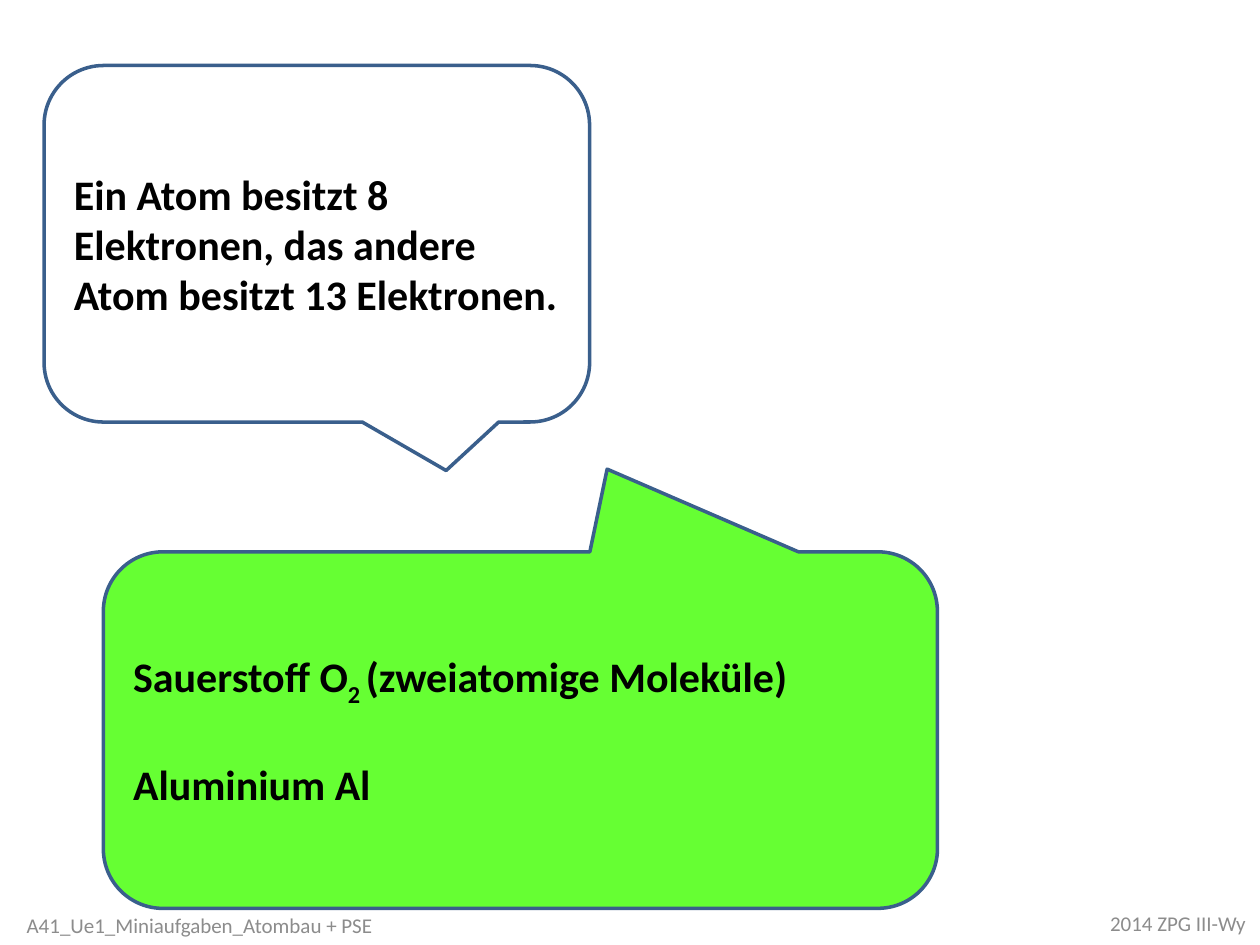
from dataclasses import dataclass

from pptx import Presentation
from pptx.dml.color import RGBColor
from pptx.enum.shapes import MSO_SHAPE
from pptx.enum.text import MSO_ANCHOR, PP_ALIGN
from pptx.util import Inches, Pt


@dataclass(frozen=True)
class Theme:
    font: str = "Calibri"
    ink: str = "000000"
    muted: str = "8C8C8C"
    outline: str = "3A5F8C"
    question_fill: str = "FFFFFF"
    answer_fill: str = "66FF33"
    body_size: int = 24
    footer_size: int = 12
    outline_width: int = 2
    answer_gap: int = 29
    subscript: str = "-25000"


THEME = Theme()

CALLOUTS = [
    {
        "box": (0.35, 0.52, 4.33, 2.83),
        "pointer": (0.237, 0.636, 0.167),
        "fill": THEME.question_fill,
        "lines": [
            [("Ein Atom besitzt 8 Elektronen, das andere Atom besitzt 13 Elektronen.", False)],
        ],
    },
    {
        "box": (0.82, 4.38, 6.62, 2.83),
        "pointer": (0.104, -0.732, 0.167),
        "fill": THEME.answer_fill,
        "lines": [
            [("Sauerstoff O", False), ("2 ", True), ("(zweiatomige Moleküle)", False)],
            [("Aluminium Al", False)],
        ],
    },
]

FOOTERS = [
    ("2014 ZPG III-Wy", (8.7, 7.13, 1.3, 0.4)),
    ("A41_Ue1_Miniaufgaben_Atombau + PSE", (0, 7.14, 3.17, 0.4)),
]


def style(paragraph, size, color, bold, alignment):
    paragraph.alignment = alignment
    paragraph.font.name = THEME.font
    paragraph.font.size = Pt(size)
    paragraph.font.bold = bold
    paragraph.font.color.rgb = RGBColor.from_string(color)


def add_callout(slide, box, pointer, fill, lines):
    callout = slide.shapes.add_shape(MSO_SHAPE.ROUNDED_RECTANGULAR_CALLOUT, *map(Inches, box))
    for index, value in enumerate(pointer):
        callout.adjustments[index] = value
    callout.shadow.inherit = False
    callout.fill.solid()
    callout.fill.fore_color.rgb = RGBColor.from_string(fill)
    callout.line.color.rgb = RGBColor.from_string(THEME.outline)
    callout.line.width = Pt(THEME.outline_width)
    frame = callout.text_frame
    frame.word_wrap = True
    frame.vertical_anchor = MSO_ANCHOR.MIDDLE
    for index, line in enumerate(lines):
        paragraph = frame.add_paragraph() if index else frame.paragraphs[0]
        style(paragraph, THEME.body_size, THEME.ink, True, PP_ALIGN.LEFT)
        if index:
            paragraph.space_before = Pt(THEME.answer_gap)
        for text, is_subscript in line:
            run = paragraph.add_run()
            run.text = text
            if is_subscript:
                run._r.get_or_add_rPr().set("baseline", THEME.subscript)


def add_footer(slide, text, box):
    frame = slide.shapes.add_textbox(*map(Inches, box)).text_frame
    frame.word_wrap = True
    frame.vertical_anchor = MSO_ANCHOR.MIDDLE
    frame.text = text
    style(frame.paragraphs[0], THEME.footer_size, THEME.muted, False, PP_ALIGN.CENTER)


def main():
    """Build the slide with a question callout, an answer callout and footers."""
    deck = Presentation()
    deck.slide_width, deck.slide_height = Inches(10), Inches(7.5)
    slide = deck.slides.add_slide(deck.slide_layouts[6])
    for callout in CALLOUTS:
        add_callout(slide, **callout)
    for text, box in FOOTERS:
        add_footer(slide, text, box)
    deck.save("out.pptx")


if __name__ == "__main__":
    main()
